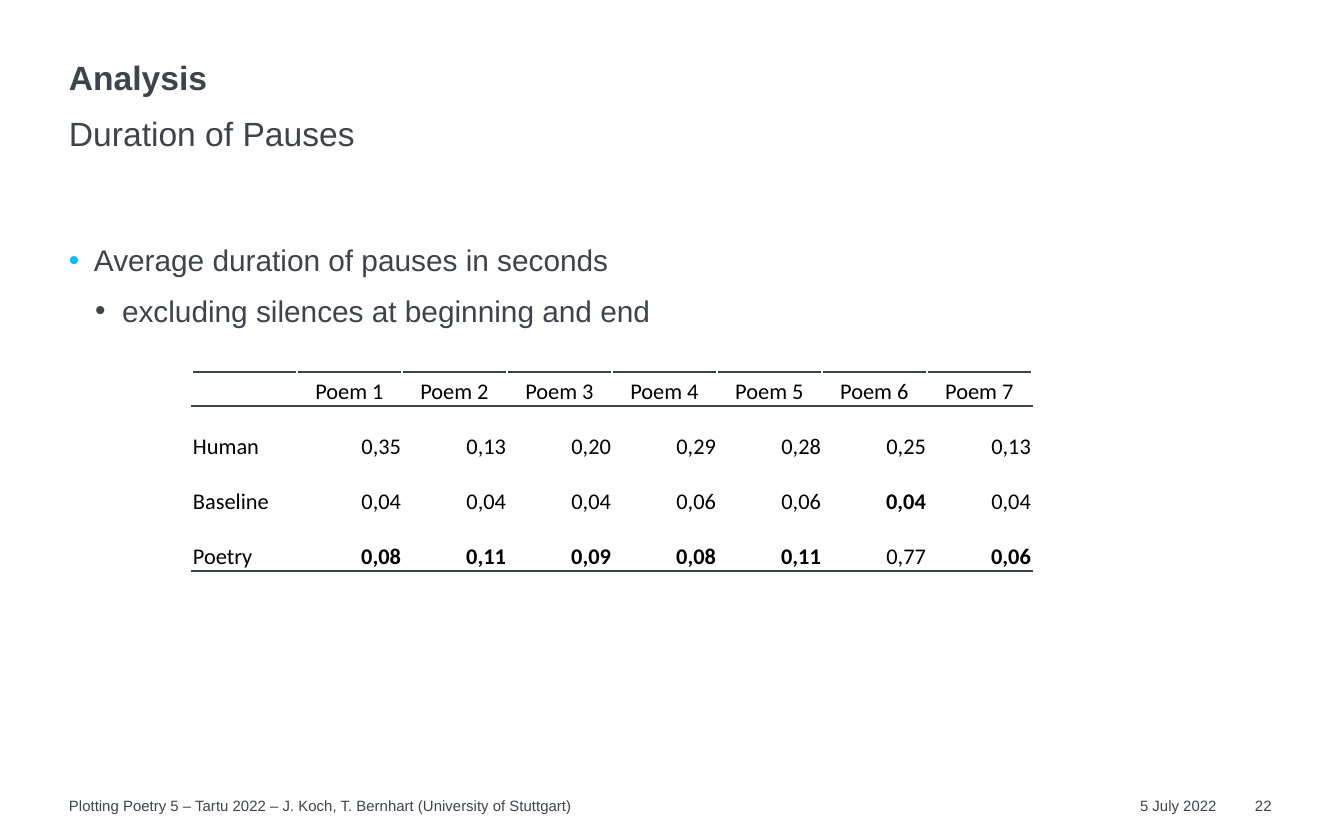
from dataclasses import dataclass

from lxml import etree
from pptx import Presentation
from pptx import util as u
from pptx.dml.color import RGBColor
from pptx.enum import text
from pptx.oxml import ns

PX = 914400 / 134.4
INK, ACCENT, BLACK, WHITE = "3E444C", "00BEFF", "000000", "FFFFFF"
LEFT, WIDTH = 69, 1207
TABLE_LEFT, TABLE_TOP, COLUMN, HEAD_ROW, DATA_ROW = 192, 372, 105, 34, 55


@dataclass
class Line:
    wording: str
    size: int
    bold: bool = False
    spacing: float = 1.0
    before: float = 0
    level: int = 0
    bullet: str = ""
    margin: int = 0
    hang: int = 0


@dataclass
class Block:
    left: int
    top: int
    width: int
    height: int
    lines: list[Line]
    anchor: text.MSO_ANCHOR = text.MSO_ANCHOR.TOP


@dataclass
class Row:
    label: str
    values: list[str]
    bold_poems: tuple[int, ...] = ()


FOOTER_TOP, FOOTER_HEIGHT = 797, 19
BLOCKS = [
    Block(LEFT, 58, WIDTH, 40, [Line("Analysis", 18, bold=True, spacing=0.9)],
          text.MSO_ANCHOR.BOTTOM),
    Block(LEFT, 105, WIDTH, 40, [Line("Duration of Pauses", 18, spacing=1.2, before=7.5)]),
    Block(LEFT, 235, WIDTH, 513, [
        Line("Average duration of pauses in seconds", 16, spacing=1.2, before=7.5,
             bullet=ACCENT, margin=25, hang=25),
        Line("excluding silences at beginning and end", 16, spacing=1.2, before=3.8,
             level=1, bullet=INK, margin=53, hang=27),
    ]),
    Block(LEFT, FOOTER_TOP, 891, FOOTER_HEIGHT, [
        Line("Plotting Poetry 5 – Tartu 2022 – J. Koch, T. Bernhart (University of Stuttgart)", 8)]),
    Block(1140, FOOTER_TOP, 90, FOOTER_HEIGHT, [Line("5 July 2022", 8)]),
    Block(1255, FOOTER_TOP, 32, FOOTER_HEIGHT, [Line("22", 8)]),
]
ROWS = [
    Row("", [f"Poem {number}" for number in range(1, 8)]),
    Row("Human", ["0,35", "0,13", "0,20", "0,29", "0,28", "0,25", "0,13"]),
    Row("Baseline", ["0,04", "0,04", "0,04", "0,06", "0,06", "0,04", "0,04"], (6,)),
    Row("Poetry", ["0,08", "0,11", "0,09", "0,08", "0,11", "0,77", "0,06"], (1, 2, 3, 4, 5, 7)),
]


def px(length: int) -> u.Emu:
    return u.Emu(round(length * PX))


def rgb(colour: str) -> RGBColor:
    return RGBColor.from_string(colour)


def add_xml(parent, tag: str, **attributes: str):
    return etree.SubElement(parent, ns.qn(tag), attributes)


def style_runs(paragraph, font: str, size: int, colour: str, bold: bool) -> None:
    for run in paragraph.runs:
        run.font.name = font
        run.font.size = u.Pt(size)
        run.font.color.rgb = rgb(colour)
        run.font.bold = bold


def add_bullet(paragraph, line: Line) -> None:
    properties = paragraph._p.get_or_add_pPr()
    properties.set("marL", str(px(line.margin)))
    properties.set("indent", str(-px(line.hang)))
    add_xml(add_xml(properties, "a:buClr"), "a:srgbClr", val=line.bullet)
    add_xml(properties, "a:buFont", typeface="Arial")
    add_xml(properties, "a:buChar", char="•")


def add_block(slide, block: Block) -> None:
    box = slide.shapes.add_textbox(px(block.left), px(block.top), px(block.width), px(block.height))
    frame = box.text_frame
    frame.word_wrap = True
    frame.vertical_anchor = block.anchor
    frame.margin_left = frame.margin_right = frame.margin_top = frame.margin_bottom = 0
    frame.text = "\n".join(line.wording for line in block.lines)
    for paragraph, line in zip(frame.paragraphs, block.lines):
        paragraph.level = line.level
        paragraph.line_spacing = line.spacing
        paragraph.space_before = u.Pt(line.before)
        style_runs(paragraph, "Arial", line.size, INK, line.bold)
        if line.bullet:
            add_bullet(paragraph, line)


def set_borders(cell, top: str, bottom: str) -> None:
    properties = cell._tc.get_or_add_tcPr()
    for side, colour in zip("LRTB", (WHITE, WHITE, top, bottom)):
        border = add_xml(properties, f"a:ln{side}", w=str(u.Pt(1)))
        add_xml(add_xml(border, "a:solidFill"), "a:srgbClr", val=colour)


def fill_cell(cell, wording: str, align: text.PP_ALIGN, bold: bool) -> None:
    cell.fill.background()
    cell.vertical_anchor = text.MSO_ANCHOR.BOTTOM
    cell.margin_left = cell.margin_right = cell.margin_top = px(1)
    cell.margin_bottom = 0
    cell.text_frame.text = wording
    paragraph = cell.text_frame.paragraphs[0]
    paragraph.alignment = align
    style_runs(paragraph, "Calibri", 12, BLACK, bold)
    if not wording:
        add_xml(paragraph._p, "a:endParaRPr", sz="1200")


def add_pause_table(slide, rows: list[Row]) -> None:
    columns = len(rows[0].values) + 1
    height = HEAD_ROW + DATA_ROW * (len(rows) - 1)
    table = slide.shapes.add_table(len(rows), columns, px(TABLE_LEFT), px(TABLE_TOP),
                                   px(COLUMN * columns), px(height)).table
    table.first_row = table.horz_banding = False
    for column in table.columns:
        column.width = px(COLUMN)
    ruled = {0, 1, len(rows)}
    for index, row in enumerate(rows):
        table.rows[index].height = px(DATA_ROW if index else HEAD_ROW)
        top, bottom = (INK if edge in ruled else WHITE for edge in (index, index + 1))
        value_align = text.PP_ALIGN.RIGHT if index else text.PP_ALIGN.CENTER
        for poem, wording in enumerate([row.label, *row.values]):
            cell = table.cell(index, poem)
            set_borders(cell, top, bottom)
            fill_cell(cell, wording, value_align if poem else text.PP_ALIGN.LEFT,
                      poem in row.bold_poems)


def main() -> None:
    deck = Presentation()
    deck.slide_width, deck.slide_height = px(1344), px(840)
    slide = deck.slides.add_slide(deck.slide_layouts[6])
    for block in BLOCKS:
        add_block(slide, block)
    add_pause_table(slide, ROWS)
    deck.save("out.pptx")


if __name__ == "__main__":
    main()
